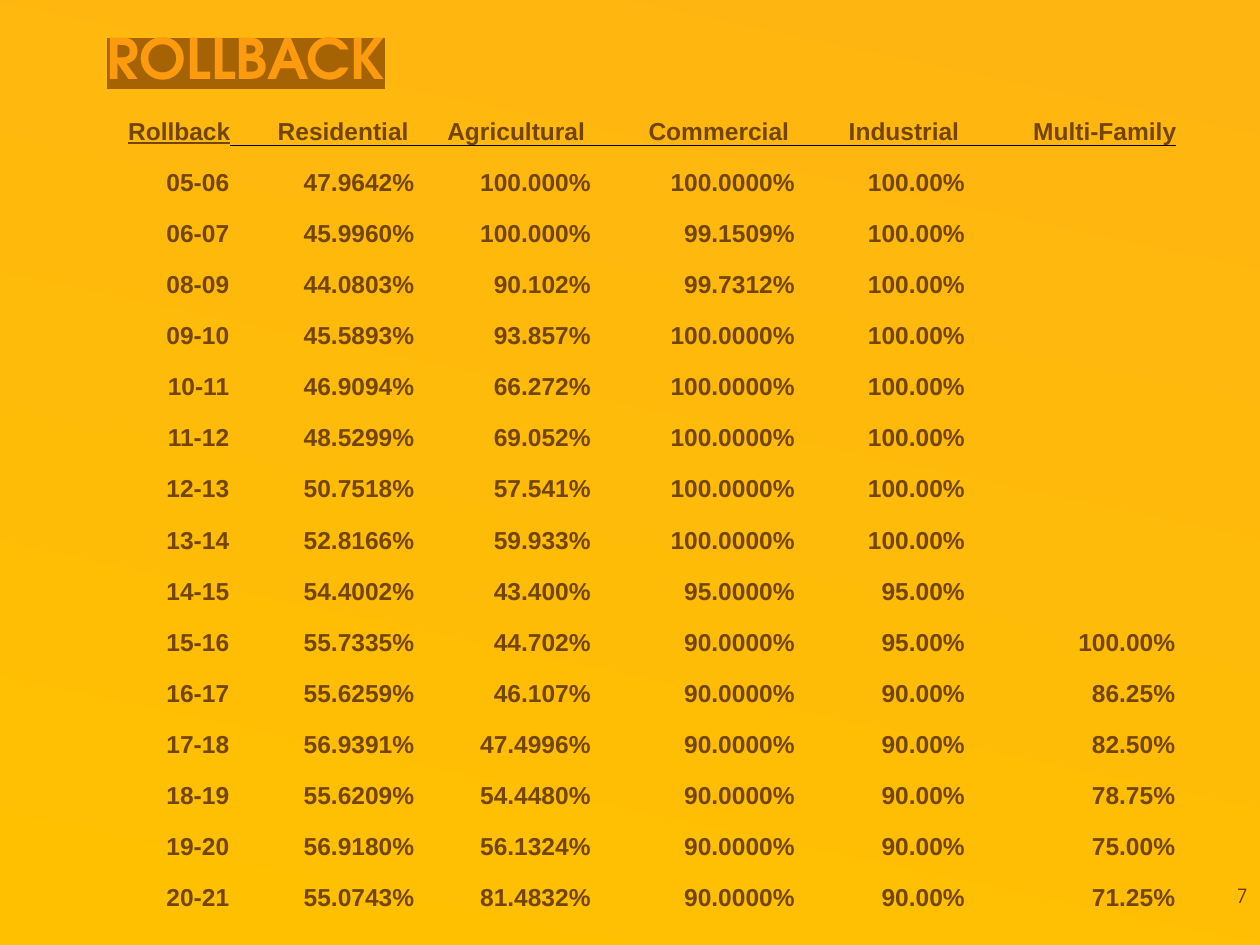
"""Build the rollback percentage slide."""
from lxml import etree
from pptx import Presentation
from pptx.dml.color import RGBColor
from pptx.enum import text as enum
from pptx.oxml import ns
from pptx.util import Pt

HUES = {"top": "FFB511", "base": "FFC000", "title": "FB9B0D", "mark": "A56303",
        "page": "68380F", "cell": "724502", "rule": "000000"}
FACE = "TeX Gyre Adventor"
PLAIN = "{2D5ABB26-0587-4C30-8999-92F81FD0307C}"
HEADS = ["Rollback", "Residential ", "Agricultural ", "Commercial ", "Industrial ", "Multi-Family"]
WIDTHS = [83.5, 105.8, 100.8, 116.6, 97.2, 120.2]
DATA = """05-06 47.9642% 100.000% 100.0000% 100.00%
06-07 45.9960% 100.000% 99.1509% 100.00%
08-09 44.0803% 90.102% 99.7312% 100.00%
09-10 45.5893% 93.857% 100.0000% 100.00%
10-11 46.9094% 66.272% 100.0000% 100.00%
11-12 48.5299% 69.052% 100.0000% 100.00%
12-13 50.7518% 57.541% 100.0000% 100.00%
13-14 52.8166% 59.933% 100.0000% 100.00%
14-15 54.4002% 43.400% 95.0000% 95.00%
15-16 55.7335% 44.702% 90.0000% 95.00% 100.00%
16-17 55.6259% 46.107% 90.0000% 90.00% 86.25%
17-18 56.9391% 47.4996% 90.0000% 90.00% 82.50%
18-19 55.6209% 54.4480% 90.0000% 90.00% 78.75%
19-20 56.9180% 56.1324% 90.0000% 90.00% 75.00%
20-21 55.0743% 81.4832% 90.0000% 90.00% 71.25%"""


def write(frame, words, size=14, face="Arial", hue="cell", bold=True, line=None, align="RIGHT"):
    par = frame.paragraphs[0]
    par.alignment = getattr(enum.PP_ALIGN, align)
    run = par.add_run()
    run.text = words
    run.font.size = Pt(size)
    run.font.name = face
    run.font.bold = bold
    run.font.underline = line
    run.font.color.rgb = RGBColor.from_string(HUES[hue])
    return run


def paint(node, tag, hue):
    fill = etree.SubElement(node, ns.qn(tag))
    etree.SubElement(fill, ns.qn("a:srgbClr"), val=HUES[hue])
    return fill


deck = Presentation()
deck.slide_width, deck.slide_height = Pt(720), Pt(540)
slide = deck.slides.add_slide(deck.slide_layouts[6])
back = slide.background.fill
back.gradient()
back.gradient_angle = 258
for stop, hue in zip(back.gradient_stops, ("top", "base")):
    stop.color.rgb = RGBColor.from_string(HUES[hue])

title = slide.shapes.add_textbox(Pt(54), Pt(0), Pt(612), Pt(72)).text_frame
title.word_wrap = True
title.vertical_anchor = enum.MSO_ANCHOR.MIDDLE
run = write(title, "ROLLBACK", size=32, face=FACE, hue="title", align="LEFT")
title.paragraphs[0].line_spacing = 0.8
props = run.font._element
mark = paint(props, "a:highlight", "mark")
props.find(ns.qn("a:solidFill")).addnext(mark)

page = slide.shapes.add_textbox(Pt(681.8), Pt(504), Pt(38.2), Pt(18)).text_frame
page.word_wrap = True
page.vertical_anchor = enum.MSO_ANCHOR.BOTTOM
write(page, "7", size=11.1, face=FACE, hue="page", bold=False)

rows = [HEADS] + [row.split() for row in DATA.splitlines()]
high = 29.2
table = slide.shapes.add_table(len(rows), len(HEADS), Pt(48.2), Pt(54),
                               Pt(sum(WIDTHS)), Pt(high * len(rows))).table
table.first_row = table.horz_banding = False
table._tbl.tblPr.find(ns.qn("a:tableStyleId")).text = PLAIN
for col, width in zip(table.columns, WIDTHS):
    col.width = Pt(width)
for r, row in enumerate(rows):
    table.rows[r].height = Pt(high)
    for c in range(len(HEADS)):
        cell = table.cell(r, c)
        cell.fill.background()
        cell.vertical_anchor = enum.MSO_ANCHOR.BOTTOM
        cell.margin_left = cell.margin_right = cell.margin_top = Pt(0.7 if r else 0)
        cell.margin_bottom = Pt(0)
        if c < len(row):
            write(cell.text_frame, row[c], line=True if r == c == 0 else None)
        if r == 0 and c:
            edge = etree.Element(ns.qn("a:lnB"), w=str(Pt(0.5)))
            paint(edge, "a:solidFill", "rule")
            cell._tc.tcPr.insert(0, edge)

deck.save("out.pptx")
